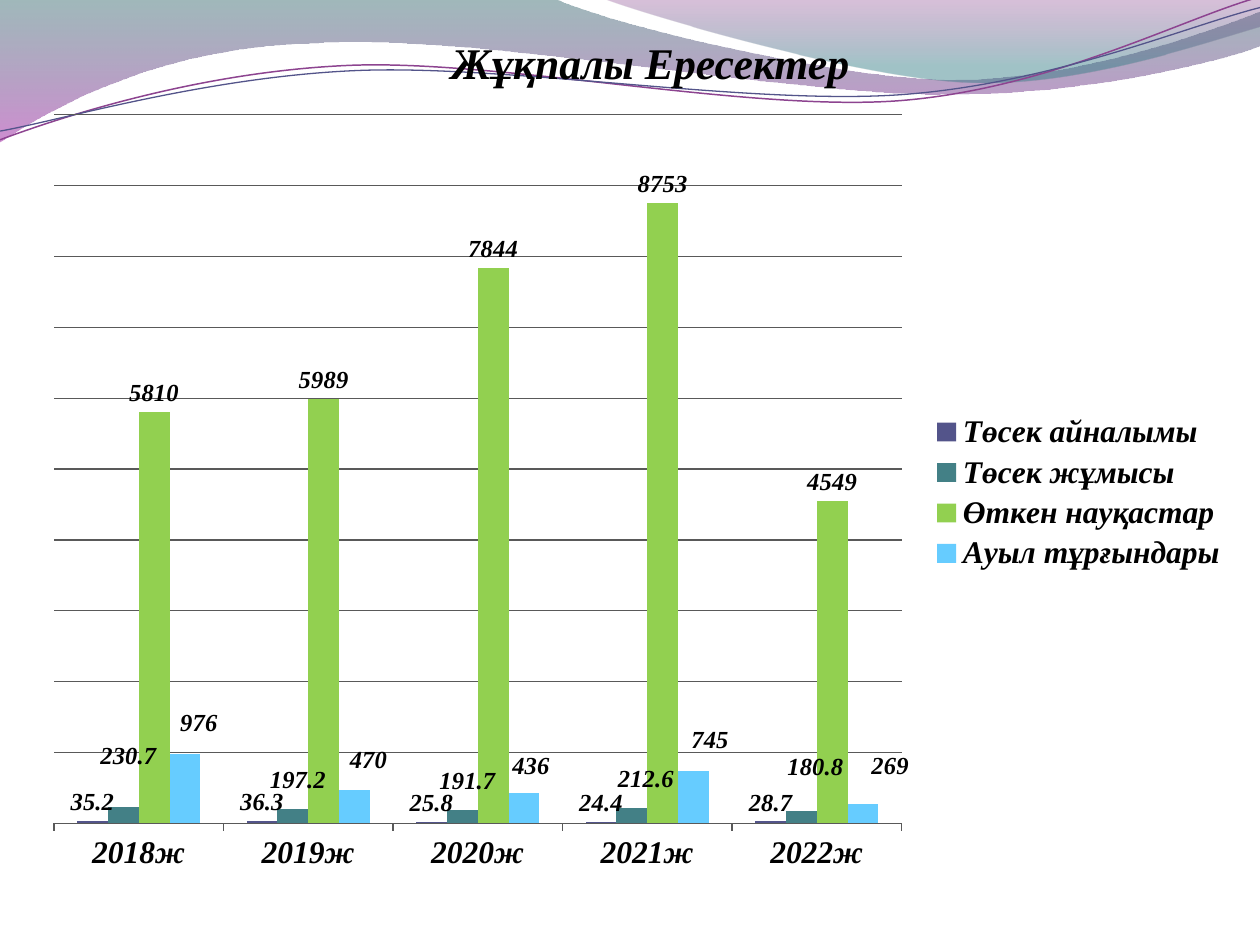
from lxml import etree
from pptx import Presentation
from pptx.chart.data import CategoryChartData
from pptx.dml.color import RGBColor
from pptx.enum.chart import XL_CHART_TYPE as ChartType, XL_LABEL_POSITION as LabelPos
from pptx.enum.chart import XL_LEGEND_POSITION as LegendPos, XL_TICK_MARK as TickMark
from pptx.enum.text import MSO_AUTO_SIZE as AutoSize, PP_ALIGN as Align
from pptx.oxml.ns import qn
from pptx.util import Pt

FONT = "Times New Roman"
COLORS = {
    "text": "000000", "grid": "595959", "indigo": "53548A", "teal": "438086",
    "green": "92D050", "sky": "66CCFF", "plum": "8D4490",
    "deep teal": "2D6368", "violet": "A530A9", "purple": "7F2F82", "sea": "2F7B82",
}
TITLE = "Жұқпалы Ересектер"
YEARS = ["2018ж", "2019ж", "2020ж", "2021ж", "2022ж"]
# name, color, values, label shifts in points (none: standard place)
SERIES = [
    ("Төсек айналымы", "indigo", [35.2, 36.3, 25.8, 24.4, 28.7], []),
    ("Төсек жұмысы", "teal", [230.7, 197.2, 191.7, 212.6, 180.8],
     [(3, -18.5), (3, -6), (3, -6), (8, -6), (8, -14.5)]),
    ("Өткен науқастар", "green", [5810, 5989, 7844, 8753, 4549], []),
    ("Ауыл тұрғындары", "sky", [976, 470, 436, 745, 269],
     [(8, -7), (8, -6.5), (4, -4.5), (9.5, -7), (15.5, -11)]),
]
CHART_BOX = (17, 56.6, 692, 450)
PLOT_AREA = {"x": 0.02, "y": 0.02, "w": 0.7, "h": 0.9}

# Waves in points: two numbers draw a line, six draw a curve.
# Gradient stops: position, color, opacity in percent
BANDS = [
    ([(0, 0), (317, -0.7), (342.7, 12.2, 478, 45.4, 545.8, 45.4),
      (614, 45.4, 689.8, 18.7, 720, 6.5), (720.7, 25.9),
      (707.8, 31.7, 626.4, 54.7, 537, 54), (447.8, 54, 275, 20.2, 185, 24.5),
      (92.9, 25.9, 33, 59.8, -0.7, 81.4)],
     [(0, "deep teal", 45), (1, "violet", 55)]),
    ([(345, -0.7), (366.5, 7.9, 491, 44.6, 553.7, 46.8),
      (616.3, 49.7, 692, 23, 720, 15.1), (720, 0)],
     [(0, "purple", 30), (0.8, "sea", 45)]),
]
STRANDS = [
    ([(0, 79.9), (34.6, 67, 113.8, 41, 199.4, 37.4),
      (284.4, 33.8, 427, 64, 513.4, 57.6), (599.8, 51, 675.4, 10.8, 718.6, -1.4)],
     "plum", 0.85),
    ([(0, 74.9), (33.8, 69, 118, 43.9, 203.8, 40.3),
      (290, 36.7, 429.8, 60.5, 516.2, 54), (602, 47.5, 677.5, 15.1, 720, 4.3)],
     "indigo", 0.75),
]
UNITS = 100  # outline units in a point


def rgb(name):
    return RGBColor.from_string(COLORS[name])


def style(font, size):
    font.name, font.size = FONT, Pt(size)
    font.bold = font.italic = True
    font.color.rgb = rgb("text")


def add_wave(page, path, close):
    ends = [(round(step[-2] * UNITS), round(step[-1] * UNITS)) for step in path]
    builder = page.shapes.build_freeform(*ends[0], scale=Pt(1) / UNITS)
    builder.add_line_segments(ends[1:], close=close)
    wave = builder.convert_to_shape()
    wave.shadow.inherit = False
    # Bend the segments that have control points
    left, top = (min(values) for values in zip(*ends))
    segments = list(wave._element.iter(qn("a:lnTo")))
    for segment, step in zip(segments, path[1:]):
        if len(step) == 6:
            curve = etree.Element(qn("a:cubicBezTo"))
            for x, y in zip(step[::2], step[1::2]):
                etree.SubElement(curve, qn("a:pt"), x=str(round(x * UNITS) - left),
                                 y=str(round(y * UNITS) - top))
            segment.getparent().replace(segment, curve)
    return wave


def add_layout(parent, index, **places):
    layout = etree.Element(qn("c:layout"))
    manual = etree.SubElement(layout, qn("c:manualLayout"))
    for key, value in places.items():
        etree.SubElement(manual, qn(f"c:{key}"), val=str(value))
    for old in parent.findall(qn("c:layout")):
        parent.remove(old)
    parent.insert(index, layout)


deck = Presentation()
deck.slide_width, deck.slide_height = Pt(720), Pt(540)
page = deck.slides.add_slide(deck.slide_layouts[6])

# Wave bands and strands
for path, stops in BANDS:
    band = add_wave(page, path, True)
    band.line.fill.background()
    band.fill.gradient()
    band.fill.gradient_angle = 270
    for stop, (position, color, _) in zip(band.fill.gradient_stops, stops):
        stop.position, stop.color.rgb = position, rgb(color)
    for node, (_, _, opacity) in zip(band._element.spPr.iter(qn("a:srgbClr")), stops):
        etree.SubElement(node, qn("a:alpha"), val=str(opacity * 1000))
for path, color, width in STRANDS:
    strand = add_wave(page, path, False)
    strand.fill.background()
    strand.line.color.rgb, strand.line.width = rgb(color), Pt(width)

# Title
box = page.shapes.add_textbox(Pt(101.5), Pt(16.6), Pt(540), Pt(37.4))
box.text_frame.word_wrap = True
box.text_frame.auto_size = AutoSize.SHAPE_TO_FIT_TEXT
para = box.text_frame.paragraphs[0]
para.alignment = Align.CENTER
span = para.add_run()
span.text = TITLE
style(span.font, 25)

# Chart
data = CategoryChartData()
data.categories = YEARS
for name, _, values, _ in SERIES:
    data.add_series(name, values)
chart = page.shapes.add_chart(ChartType.COLUMN_CLUSTERED, *map(Pt, CHART_BOX), data).chart
chart.has_title = False
chart.font.name, chart.font.size = "Cambria", Pt(18)
chart.font.color.rgb = rgb("text")
chart.has_legend = True
chart.legend.position, chart.legend.include_in_layout = LegendPos.RIGHT, False
style(chart.legend.font, 18)

# Axes
years_axis, value_axis = chart.category_axis, chart.value_axis
style(years_axis.tick_labels.font, 18)
years_axis.major_tick_mark = TickMark.OUTSIDE
value_axis.visible = False
value_axis.minimum_scale, value_axis.maximum_scale = 0, 10000
value_axis.major_unit = 1000
value_axis.has_major_gridlines = True
for line in (years_axis.format.line, value_axis.major_gridlines.format.line):
    line.color.rgb, line.width = rgb("grid"), Pt(0.75)

# Columns and value labels
plot = chart.plots[0]
plot.gap_width, plot.overlap, plot.vary_by_categories = 150, 0, False
for series, (_, color, _, shifts) in zip(plot.series, SERIES):
    series.format.fill.solid()
    series.format.fill.fore_color.rgb = rgb(color)
    labels = series.data_labels
    labels.show_value, labels.position = True, LabelPos.OUTSIDE_END
    style(labels.font, 14)
    for i in range(len(shifts)):
        label = series.points[i].data_label
        label.position = LabelPos.OUTSIDE_END
        style(label.font, 14)
    for node, (dx, dy) in zip(series._element.iter(qn("c:dLbl")), shifts):
        add_layout(node, 1, x=round(dx / CHART_BOX[2], 4), y=round(dy / CHART_BOX[3], 4))
    for leader in series._element.iter(qn("c:showLeaderLines")):
        leader.set("val", "0")
plot_area = chart._chartSpace.find(f".//{qn('c:plotArea')}")
add_layout(plot_area, 0, layoutTarget="inner", xMode="edge", yMode="edge", **PLOT_AREA)

deck.save("out.pptx")
